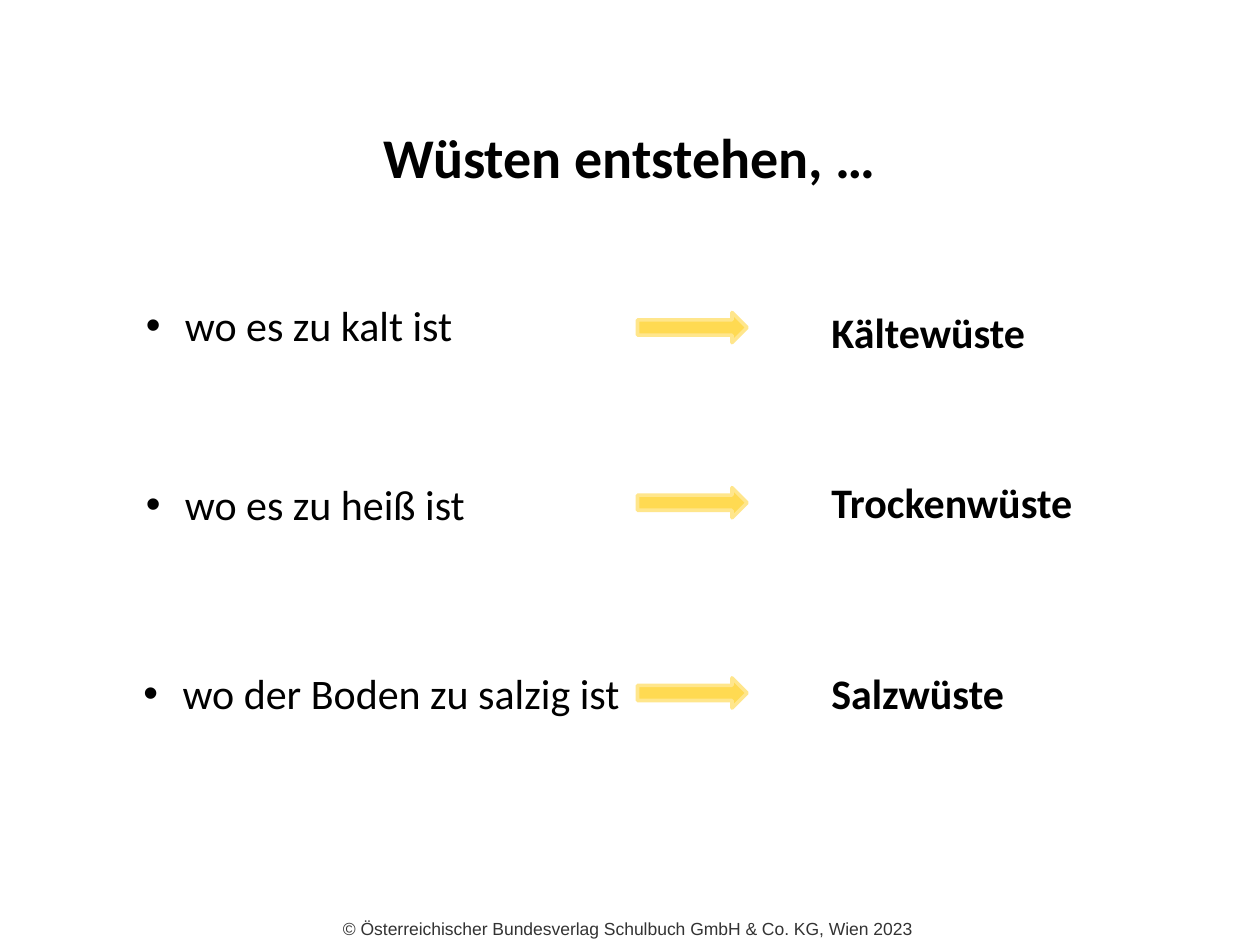
"""Build a slide that pairs three causes of deserts with their desert types."""
from pptx import Presentation
from pptx.dml.color import RGBColor
from pptx.enum.shapes import MSO_SHAPE as Shape
from pptx.enum.text import MSO_ANCHOR as Anchor, MSO_AUTO_SIZE as Fit, PP_ALIGN as Align
from pptx.oxml.ns import qn
from pptx.util import Inches, Pt
from lxml.etree import SubElement

BLACK = RGBColor(0x00, 0x00, 0x00)
GREY = RGBColor(0x33, 0x33, 0x33)
GOLD = RGBColor(0xFF, 0xDA, 0x52)
PALE = RGBColor(0xFF, 0xE6, 0x8C)

ROWS = [
    ("wo es zu kalt ist", 1.06, 2.33, 2.66, 2.48, "Kältewüste", 2.38, 1.76),
    ("wo es zu heiß ist", 1.06, 3.75, 2.76, 3.87, "Trockenwüste", 3.73, 2.13),
    ("wo der Boden zu salzig ist", 1.04, 5.25, 4.02, 5.38, "Salzwüste", 5.25, 1.59),
]
ARROW_X, TYPE_X, ROW_H = 5.06, 6.5, 0.51

deck = Presentation()
deck.slide_width, deck.slide_height = Inches(10), Inches(7.5)
slide = deck.slides.add_slide(deck.slide_layouts[5])
shapes = slide.shapes


def style(frame, text, size, color=BLACK, bold=False, name="Calibri"):
    frame.text = text
    font = frame.paragraphs[0].runs[0].font
    font.name, font.size, font.bold = name, Pt(size), bold
    font.color.rgb = color


def label(text, x, y, width, bold=False):
    box = shapes.add_textbox(Inches(x), Inches(y), Inches(width), Inches(ROW_H))
    frame = box.text_frame
    frame.word_wrap = False
    frame.auto_size = Fit.SHAPE_TO_FIT_TEXT
    style(frame, text, 24, bold=bold)
    return frame.paragraphs[0]


foot = shapes.add_textbox(0, Inches(7.13), deck.slide_width, Inches(0.4))
foot.left = Inches(-0.02)
frame = foot.text_frame
frame.word_wrap = True
frame.vertical_anchor = Anchor.BOTTOM
frame.margin_bottom = Inches(0.08)
style(frame, "© Österreichischer Bundesverlag Schulbuch GmbH & Co. KG, Wien 2023",
      10, GREY, name="Arial")
frame.paragraphs[0].alignment = Align.CENTER

title = shapes.title
title.left, title.top = Inches(0.12), Inches(0.92)
title.width, title.height = Inches(9.76), Inches(0.64)
title.text_frame.auto_size = Fit.NONE
title.text_frame.vertical_anchor = Anchor.TOP
style(title.text_frame, "Wüsten entstehen, …", 32, bold=True)
title.text_frame.paragraphs[0].alignment = Align.CENTER

for cause, x, y, width, arrow_y, kind, kind_y, kind_w in ROWS:
    props = label(cause, x, y, width)._p.get_or_add_pPr()
    props.set("marL", str(Inches(0.31)))
    props.set("indent", str(Inches(-0.31)))
    SubElement(props, qn("a:buFont"), typeface="Arial")
    SubElement(props, qn("a:buChar"), char="•")

    arrow = shapes.add_shape(Shape.RIGHT_ARROW, Inches(ARROW_X), Inches(arrow_y),
                             Inches(0.87), Inches(0.24))
    arrow.shadow.inherit = False
    arrow.fill.solid()
    arrow.fill.fore_color.rgb = GOLD
    arrow.line.color.rgb = PALE
    arrow.line.width = Pt(2)

    label(kind, TYPE_X, kind_y, kind_w, bold=True)

deck.save("out.pptx")
